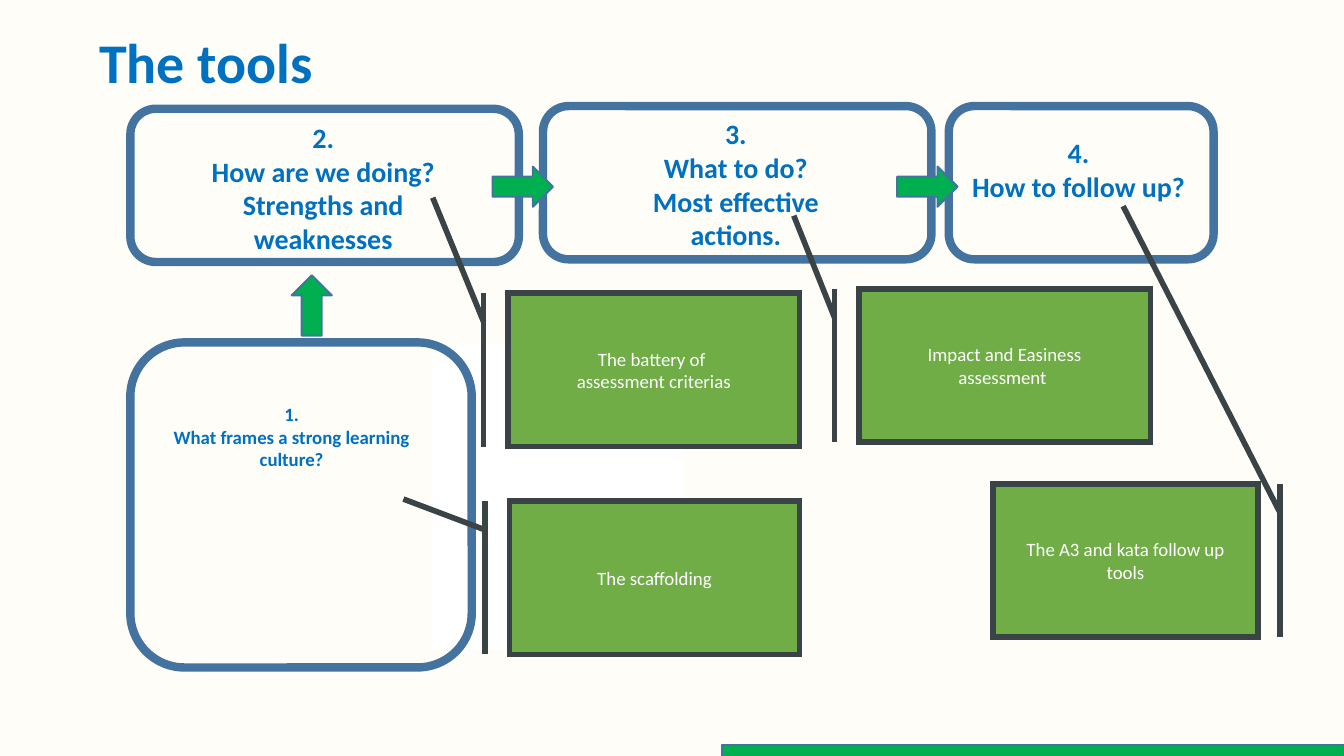
from lxml.etree import SubElement
from pptx import Presentation
from pptx.dml.color import RGBColor
from pptx.enum.shapes import MSO_SHAPE as Preset
from pptx.enum.text import MSO_ANCHOR as Anchor, PP_ALIGN as Align
from pptx.oxml.ns import qn
from pptx.util import Inches, Pt

SLIDE_W, SLIDE_H = Inches(10), Inches(5.625)

CREAM = RGBColor(0xFF, 0xFD, 0xF8)
WHITE = RGBColor(0xFF, 0xFF, 0xFF)
BLUE = RGBColor(0x00, 0x70, 0xC0)
STEEL = RGBColor(0x43, 0x73, 0x9E)
GREEN = RGBColor(0x00, 0xB0, 0x50)
LEAF = RGBColor(0x70, 0xAD, 0x47)
SLATE = RGBColor(0x3A, 0x44, 0x46)

FONT = "Calibri"
STEP_ROW_H = 20.27
SMALL, STEP, TITLE = 10.1, 15, 30


def place(left, top, width, height):
    """Turn percentages of the slide's width and height into lengths."""
    return (int(SLIDE_W * left / 100), int(SLIDE_H * top / 100),
            int(SLIDE_W * width / 100), int(SLIDE_H * height / 100))


def write(frame, lines, size, color, bold=False, align=Align.CENTER):
    frame.word_wrap = True
    for index, line in enumerate(lines):
        paragraph = frame.paragraphs[0] if index == 0 else frame.add_paragraph()
        paragraph.alignment = align
        run = paragraph.add_run()
        run.text = line
        run.font.name = FONT
        run.font.size = Pt(size)
        run.font.bold = bold
        run.font.color.rgb = color


def add_label(slide, area, lines, size):
    label = slide.shapes.add_textbox(*place(*area))
    write(label.text_frame, lines, size, BLUE, bold=True)


def add_block(slide, preset, area, fill=None, line=None, weight=1):
    block = slide.shapes.add_shape(preset, *place(*area))
    block.shadow.inherit = False
    if fill is None:
        block.fill.background()
    else:
        block.fill.solid()
        block.fill.fore_color.rgb = fill
    if line is None:
        block.line.fill.background()
    else:
        block.line.color.rgb = line
        block.line.width = Pt(weight)
    return block


def add_step_frame(slide, area):
    add_block(slide, Preset.ROUNDED_RECTANGLE, area, line=STEEL, weight=4.5)


def add_step_arrow(slide, left, top, rotation=0):
    arrow = add_block(slide, Preset.UP_ARROW, (left, top, 3, 8), GREEN, STEEL)
    arrow.rotation = rotation


def add_tool(slide, area, pointer, lines, mirrored=False):
    """Add a tool callout; pointer is the (y, x) of its tip in shares of its size."""
    tool = add_block(slide, Preset.LINE_CALLOUT_1_BORDER_AND_ACCENT_BAR,
                     area, LEAF, SLATE, 3)
    for index, share in enumerate((0.1875, -0.0833, *pointer)):
        tool.adjustments[index] = share
    outline = tool._element.spPr.find(qn("a:ln"))
    SubElement(outline, qn("a:miter"), lim="800000")
    if mirrored:
        tool._element.spPr.find(qn("a:xfrm")).set("flipH", "1")
    tool.text_frame.vertical_anchor = Anchor.MIDDLE
    write(tool.text_frame, lines, SMALL, WHITE)


def add_title(slide, text):
    title = slide.shapes.add_textbox(*place(6.4, 1.4, 87.2, 14.4))
    title.text_frame.vertical_anchor = Anchor.MIDDLE
    write(title.text_frame, [text], TITLE, BLUE, bold=True, align=Align.LEFT)
    title.text_frame.paragraphs[0].line_spacing = 0.9


def add_steps(slide):
    for left, top, width in ((9.7, 14.4, 28.9), (40.4, 14.04, 28.9), (70.6, 14.04, 19.7)):
        add_step_frame(slide, (left, top, width, STEP_ROW_H))
    add_block(slide, Preset.RECTANGLE, (32.1, 45.5, 18.8, 40.5), WHITE)
    add_label(slide, (13.5, 15.1, 21.1, 19.7),
              ["2.", "How are we doing?", "Strengths and weaknesses"], STEP)
    add_label(slide, (44.2, 14.6, 21.1, 19.7),
              ["3.", "What to do?", "Most effective actions."], STEP)
    add_label(slide, (71.3, 17.1, 17.9, 10.8), ["4.", "How to follow up?"], STEP)
    add_step_frame(slide, (9.7, 45.3, 25.4, 43))
    add_label(slide, (11.4, 52.4, 20.6, 10.8),
              ["1.", "What frames a strong learning culture?"], SMALL)
    add_step_arrow(slide, 21.7, 36.4)
    for left in (37.4, 67.5):
        add_step_arrow(slide, left, 20.7, rotation=90)


def add_tools(slide):
    add_tool(slide, (37.9, 66.3, 21.6, STEP_ROW_H), (-0.014, -0.365),
             ["The scaffolding"])
    add_tool(slide, (37.8, 38.8, 21.7, STEP_ROW_H), (-0.624, -0.258),
             ["The battery of ", "assessment criterias"])
    add_tool(slide, (63.9, 38.2, 21.7, STEP_ROW_H), (-0.477, -0.223),
             ["Impact and Easiness", "assessment "])
    add_tool(slide, (73.9, 64, 19.7, STEP_ROW_H), (-1.812, 0.509),
             ["The A3 and kata follow up tools"], mirrored=True)


def main():
    deck = Presentation()
    deck.slide_width, deck.slide_height = SLIDE_W, SLIDE_H
    slide = deck.slides.add_slide(deck.slide_layouts[6])
    slide.background.fill.solid()
    slide.background.fill.fore_color.rgb = CREAM
    add_title(slide, "The tools")
    add_steps(slide)
    add_block(slide, Preset.RECTANGLE, (53.7, 98.6, 46.3, 1.8), GREEN, STEEL)
    add_tools(slide)
    deck.save("out.pptx")


if __name__ == "__main__":
    main()
